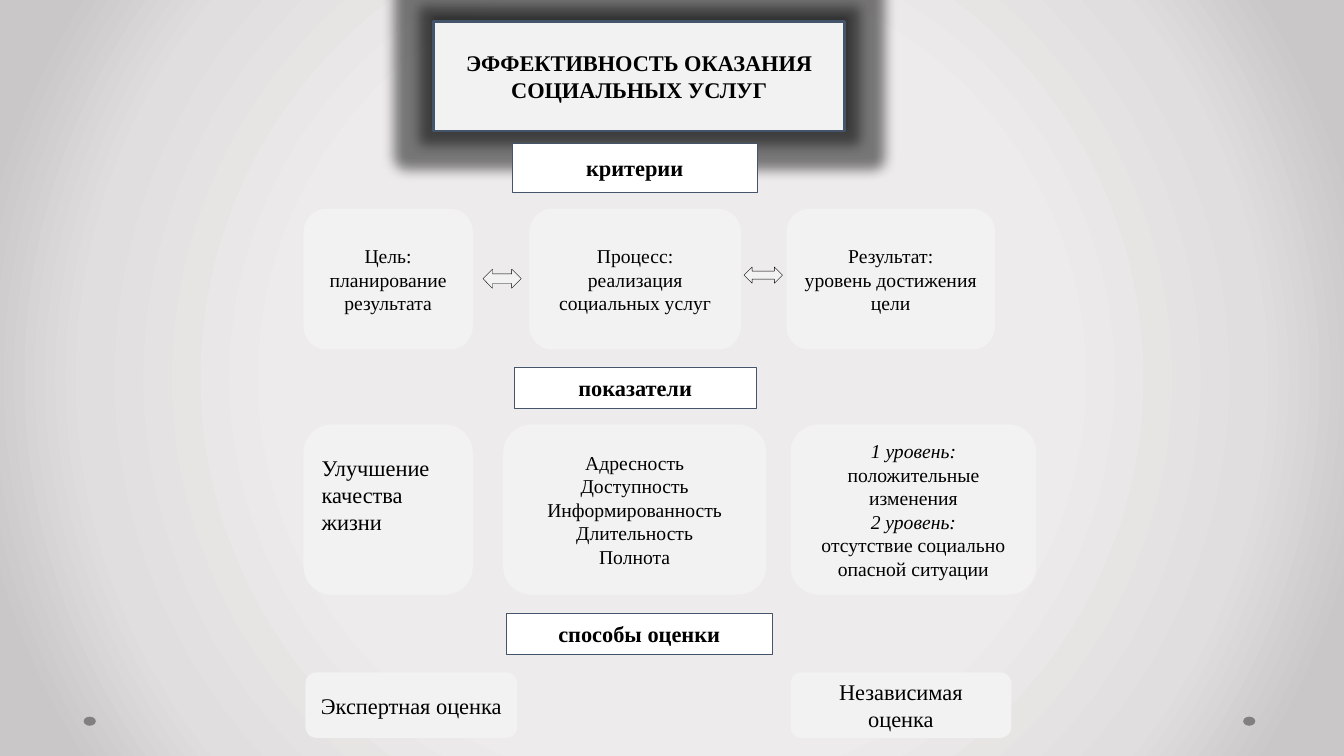
from pptx import Presentation
from pptx.dml.color import RGBColor
from pptx.enum.shapes import MSO_SHAPE as Shape
from pptx.enum.text import MSO_ANCHOR as Anchor, PP_ALIGN as Align
from pptx.oxml import parse_xml
from pptx.oxml.ns import nsdecls
from pptx.util import Inches, Pt

# Content: (left, top, width, height) in inches, then text
TITLE = ((4.3, 0.21, 4.08, 1.09), ["ЭФФЕКТИВНОСТЬ ОКАЗАНИЯ СОЦИАЛЬНЫХ УСЛУГ"])
HEADINGS = [
    ((5.08, 1.42, 2.43, 0.49), ["критерии"]),
    ((5.1, 3.64, 2.4, 0.41), ["показатели"]),
    ((5.02, 6.08, 2.64, 0.41), ["способы оценки"]),
]
# Each row: top, height, then cards as (left, width, type size, paragraphs)
# A paragraph is a string, or a list of (text, italic) runs
CARD_ROWS = [
    (2.07, 1.4, [
        (3.01, 1.68, "small", ["Цель: планирование результата"]),
        (5.25, 2.1, "small", ["Процесс:", "реализация социальных услуг"]),
        (7.8, 2.07, "small", ["Результат:", "уровень достижения цели"]),
    ]),
    (4.21, 1.69, [
        (3.01, 1.68, "large", ["Улучшение качества жизни"]),
        (4.99, 2.61, "small", ["Адресность", "Доступность", "Информированность",
                               "Длительность", "Полнота"]),
        (7.84, 2.44, "small", [
            [("1 уровень: ", True), ("положительные изменения", False)],
            [("2 уровень:", True)],
            "отсутствие социально опасной ситуации"]),
    ]),
    (6.67, 0.65, [
        (3.03, 2.1, "large", ["Экспертная оценка"]),
        (7.84, 2.19, "large", ["Независимая оценка"]),
    ]),
]
ARROWS = [(4.79, 2.67, 0.38, 0.19), (7.38, 2.65, 0.38, 0.16)]
DOT_LEFTS = [0.83, 12.33]

THEME = {
    "font": "Times New Roman", "large": 16, "small": 14,
    "text": "000000", "card": "F2F2F2", "heading": "FFFFFF",
    "border": "44546A", "dot": "808080",
    "background": [(50, "EDEBEB"), (76, "E0DEDE"), (92, "C9C7C7")],
}

presentation = Presentation()
presentation.slide_width = Inches(13.33)
presentation.slide_height = Inches(7.5)
slide = presentation.slides.add_slide(presentation.slide_layouts[6])


def add_box(kind, box, fill, line=None, line_width=0.25):
    shape = slide.shapes.add_shape(kind, *map(Inches, box))
    shape.shadow.inherit = False
    shape.fill.solid()
    shape.fill.fore_color.rgb = RGBColor.from_string(THEME[fill])
    if line:
        shape.line.color.rgb = RGBColor.from_string(THEME[line])
        shape.line.width = Pt(line_width)
    else:
        shape.line.fill.background()
    return shape


def write(shape, paragraphs, size, bold=False):
    frame = shape.text_frame
    frame.word_wrap = True
    frame.vertical_anchor = Anchor.MIDDLE
    for index, content in enumerate(paragraphs):
        paragraph = frame.add_paragraph() if index else frame.paragraphs[0]
        paragraph.alignment = Align.CENTER
        font = paragraph.font
        font.name, font.size, font.bold = THEME["font"], Pt(THEME[size]), bold
        font.color.rgb = RGBColor.from_string(THEME["text"])
        runs = [(content, False)] if isinstance(content, str) else content
        for text, italic in runs:
            run = paragraph.add_run()
            run.text = text
            if italic:
                run.font.italic = True


# Background: radial gradient from the centre
stops = "".join(f'<a:gs pos="{position * 1000}"><a:srgbClr val="{colour}"/></a:gs>'
                for position, colour in THEME["background"])
slide.element.cSld.insert(0, parse_xml(
    f'<p:bg {nsdecls("p", "a")}><p:bgPr><a:gradFill rotWithShape="1">'
    f'<a:gsLst>{stops}</a:gsLst><a:path path="circle">'
    '<a:fillToRect l="50000" t="50000" r="50000" b="50000"/></a:path>'
    '</a:gradFill><a:effectLst/></p:bgPr></p:bg>'))

# Corner dots
for left in DOT_LEFTS:
    add_box(Shape.OVAL, (left, 7.11, 0.12, 0.09), "dot")

# Title with a dark glow and shadow
title_box, title_text = TITLE
title = add_box(Shape.RECTANGLE, title_box, "card", "border", 2)
write(title, title_text, "large", bold=True)
black = '<a:srgbClr val="000000"><a:alpha val="40000"/></a:srgbClr>'
effects = title.element.spPr.find(
    "{http://schemas.openxmlformats.org/drawingml/2006/main}effectLst")
for effect in (f'<a:glow {nsdecls("a")} rad="{Pt(18)}">{black}</a:glow>',
               f'<a:outerShdw {nsdecls("a")} blurRad="{Pt(4)}" dist="{Pt(3)}" '
               f'dir="16200000" rotWithShape="0">{black}</a:outerShdw>'):
    effects.append(parse_xml(effect))

# Section headings
for box, text in HEADINGS:
    write(add_box(Shape.RECTANGLE, box, "heading", "border"), text, "large", bold=True)

# Cards
cards = {}
for top, height, row in CARD_ROWS:
    for left, width, size, paragraphs in row:
        card = add_box(Shape.ROUNDED_RECTANGLE, (left, top, width, height), "card")
        write(card, paragraphs, size)
        cards[left, top] = card

# The quality-of-life card is left-aligned and sits above the middle
quality = cards[3.01, 4.21].text_frame
quality.margin_bottom = Inches(0.34)
quality.paragraphs[0].alignment = Align.LEFT

# Double arrows between the criteria
for box in ARROWS:
    add_box(Shape.LEFT_RIGHT_ARROW, box, "card", "text")

presentation.save("out.pptx")
